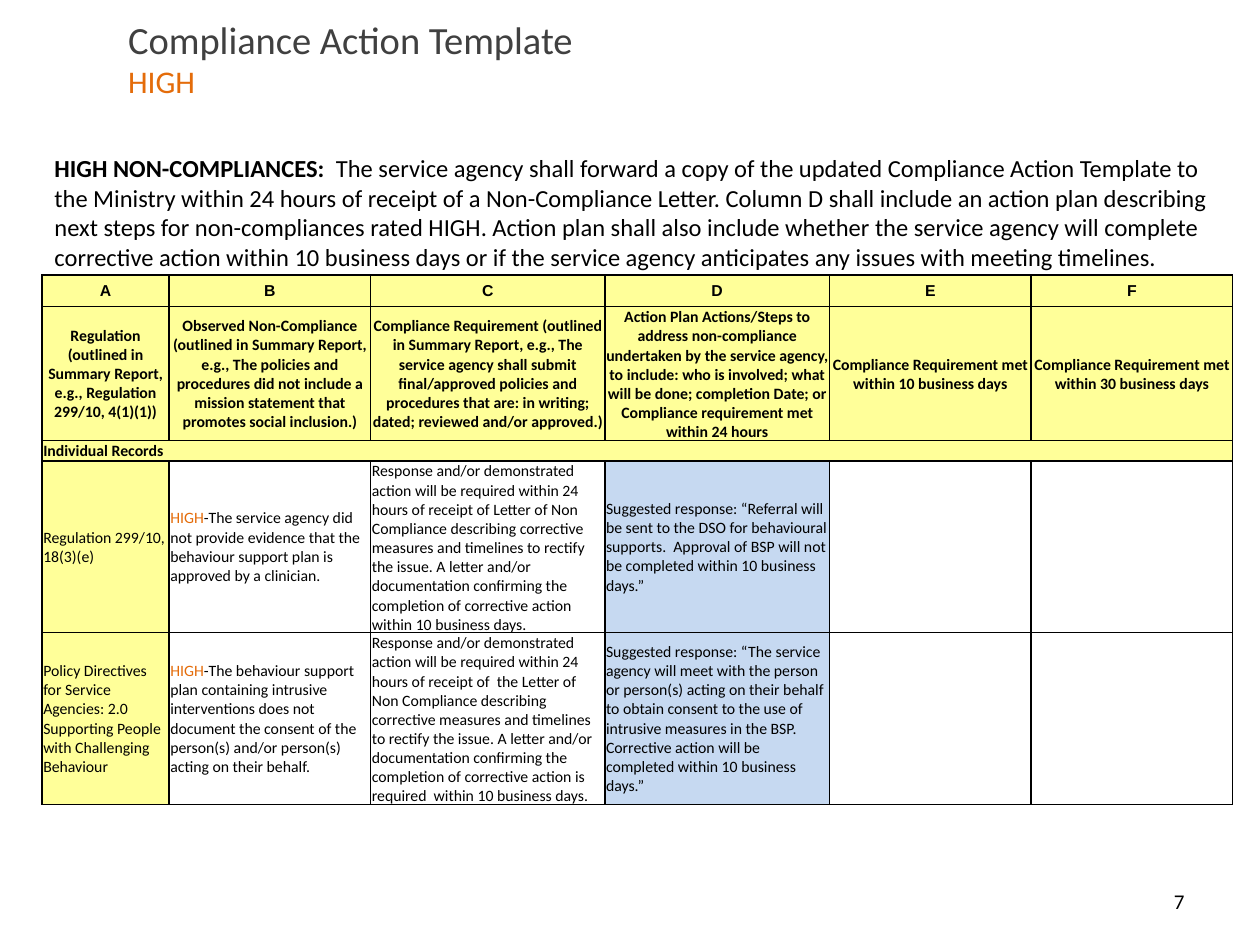
import pptx
import pptx.util
import pptx.dml.color
import pptx.enum.text
import pptx.oxml
import pptx.oxml.ns

Pt = pptx.util.Pt
RGBColor = pptx.dml.color.RGBColor
Align = pptx.enum.text.PP_ALIGN
Anchor = pptx.enum.text.MSO_ANCHOR

BLACK = RGBColor(0x00, 0x00, 0x00)
WHITE = RGBColor(0xFF, 0xFF, 0xFF)
GREY = RGBColor(0x40, 0x40, 0x40)
ORANGE = RGBColor(0xE4, 0x6C, 0x0A)
YELLOW = RGBColor(0xFF, 0xFF, 0x99)
BLUE = RGBColor(0xC6, 0xD9, 0xF1)

TITLE = "Compliance Action Template"
RATING = "HIGH"
PAGE_NUMBER = "7"
INTRO_LEAD = "HIGH NON-COMPLIANCES:  "
INTRO = (
    "The service agency shall forward a copy of the updated Compliance Action Template "
    "to the Ministry within 24 hours of receipt of a Non-Compliance Letter. Column D shall "
    "include an action plan describing next steps for non-compliances rated HIGH. Action plan "
    "shall also include whether the service agency will complete corrective action within "
    "10 business days or if the service agency anticipates any issues with meeting timelines."
)

LETTERS = "ABCDEF"
HEADINGS = [
    "Regulation (outlined in Summary Report, e.g., Regulation 299/10, 4(1)(1))",
    "Observed Non-Compliance (outlined in Summary Report, e.g., The policies and procedures "
    "did not include a mission statement that promotes social inclusion.)",
    "Compliance Requirement (outlined in Summary Report, e.g., The service agency shall submit "
    "final/approved policies and procedures that are: in writing; dated; reviewed and/or approved.)",
    "Action Plan Actions/Steps to address non-compliance undertaken by the service agency, "
    "to include: who is involved; what will be done; completion Date; or Compliance requirement "
    "met within 24 hours",
    "Compliance Requirement met within 10 business days",
    "Compliance Requirement met within 30 business days",
]
SECTION = "Individual Records"
# Regulation, observation (after its rating), requirement, action plan
RECORDS = [
    (
        "Regulation 299/10, 18(3)(e)",
        "-The service agency did not provide evidence that the behaviour support plan is "
        "approved by a clinician.",
        "Response and/or demonstrated action will be required within 24 hours of receipt of "
        "Letter of Non Compliance describing corrective measures and timelines to rectify the "
        "issue. A letter and/or documentation confirming the completion of corrective action "
        "within 10 business days.",
        "Suggested response: “Referral will be sent to the DSO for behavioural supports.  "
        "Approval of BSP will not be completed within 10 business days.”",
    ),
    (
        "Policy Directives for Service Agencies: 2.0 Supporting People with Challenging Behaviour",
        "-The behaviour support plan containing intrusive interventions does not document the "
        "consent of the person(s) and/or person(s) acting on their behalf.",
        "Response and/or demonstrated action will be required within 24 hours of receipt of  the "
        "Letter of Non Compliance describing corrective measures and timelines to rectify the "
        "issue. A letter and/or documentation confirming the completion of corrective action is "
        "required  within 10 business days.",
        "Suggested response: “The service agency will meet with the person or person(s) acting on "
        "their behalf to obtain consent to the use of intrusive measures in the BSP.  Corrective "
        "action will be completed within 10 business days.”",
    ),
]
RECORD_FILLS = [YELLOW, WHITE, WHITE, BLUE, WHITE, WHITE]

LEFT, WIDTH = 24, 680.4
TABLE_TOP = 157.2
COLUMN_WIDTHS = [72.6, 115.2, 133.8, 128.4, 115.2, 115.2]
ROW_HEIGHTS = [18, 69, 11, 94.5, 96]


def add_span(para, text, size, color=BLACK, bold=False, name="Calibri"):
    span = para.add_run()
    span.text = text
    for key, value in {"size": Pt(size), "bold": bold, "name": name}.items():
        setattr(span.font, key, value)
    span.font.color.rgb = color


def add_box(slide, left, top, width, height):
    frame = slide.shapes.add_textbox(Pt(left), Pt(top), Pt(width), Pt(height)).text_frame
    frame.word_wrap = True
    return frame


def set_borders(cell):
    """Draw a 1 pt black line on each side; call before the fill is set."""
    properties = cell._tc.get_or_add_tcPr()
    for side in ("lnL", "lnR", "lnT", "lnB"):
        properties.append(pptx.oxml.parse_xml(
            f'<a:{side} {pptx.oxml.ns.nsdecls("a")} w="{Pt(1)}"><a:solidFill>'
            f'<a:srgbClr val="{BLACK}"/></a:solidFill></a:{side}>'
        ))


def fill_cell(cell, color, spans=(), align=Align.LEFT, **font):
    """Format a cell and write its (text, colour) spans."""
    set_borders(cell)
    cell.fill.solid()
    cell.fill.fore_color.rgb = color
    layout = {"vertical_anchor": Anchor.MIDDLE, "margin_left": Pt(0.72),
              "margin_right": Pt(0.72), "margin_top": Pt(0.72), "margin_bottom": 0}
    for key, value in layout.items():
        setattr(cell, key, value)
    para = cell.text_frame.paragraphs[0]
    para.alignment = align
    for text, text_color in spans:
        add_span(para, text, 9, text_color, **font)


def add_title(slide):
    title = slide.shapes.title
    place = {"left": Pt(66), "top": Pt(12), "width": Pt(540), "height": Pt(42)}
    for key, value in place.items():
        setattr(title, key, value)
    frame = title.text_frame
    frame.auto_size = pptx.enum.text.MSO_AUTO_SIZE.NONE
    frame.vertical_anchor = Anchor.MIDDLE
    para = frame.paragraphs[0]
    para.alignment = Align.LEFT
    add_span(para, TITLE, 22, GREY)
    para.add_line_break()
    add_span(para, RATING, 18, ORANGE)


def add_compliance_table(slide):
    table = slide.shapes.add_table(
        len(ROW_HEIGHTS), len(COLUMN_WIDTHS),
        Pt(LEFT), Pt(TABLE_TOP), Pt(WIDTH), Pt(sum(ROW_HEIGHTS)),
    ).table
    table.first_row = table.horz_banding = False
    for column, width in zip(table.columns, COLUMN_WIDTHS):
        column.width = Pt(width)
    for row, height in zip(table.rows, ROW_HEIGHTS):
        row.height = Pt(height)

    for column, (letter, heading) in enumerate(zip(LETTERS, HEADINGS)):
        fill_cell(table.cell(0, column), YELLOW, [(letter, BLACK)], Align.CENTER,
                  bold=True, name="Arial")
        fill_cell(table.cell(1, column), YELLOW, [(heading, BLACK)], Align.CENTER, bold=True)
        fill_cell(table.cell(2, column), YELLOW,
                  [(SECTION, BLACK)] if column == 0 else [], bold=True)
    table.cell(2, 0).merge(table.cell(2, len(LETTERS) - 1))

    for row, (regulation, observed, requirement, plan) in enumerate(RECORDS, start=3):
        contents = [
            [(regulation, BLACK)],
            [(RATING, ORANGE), (observed, BLACK)],
            [(requirement, BLACK)],
            [(plan, BLACK)],
            [],
            [],
        ]
        for column, (spans, color) in enumerate(zip(contents, RECORD_FILLS)):
            fill_cell(table.cell(row, column), color, spans)


def main():
    deck = pptx.Presentation()
    deck.slide_width, deck.slide_height = Pt(720), Pt(540)
    slide = deck.slides.add_slide(deck.slide_layouts[5])
    add_title(slide)

    number = add_box(slide, 516, 500.5, 168, 28.8)
    number.vertical_anchor = Anchor.MIDDLE
    number.paragraphs[0].alignment = Align.RIGHT
    add_span(number.paragraphs[0], PAGE_NUMBER, 12)

    add_compliance_table(slide)

    intro = add_box(slide, LEFT, 84.2, WIDTH, 74.9).paragraphs[0]
    add_span(intro, INTRO_LEAD, 14, bold=True)
    add_span(intro, INTRO, 14)
    deck.save("out.pptx")


if __name__ == "__main__":
    main()
